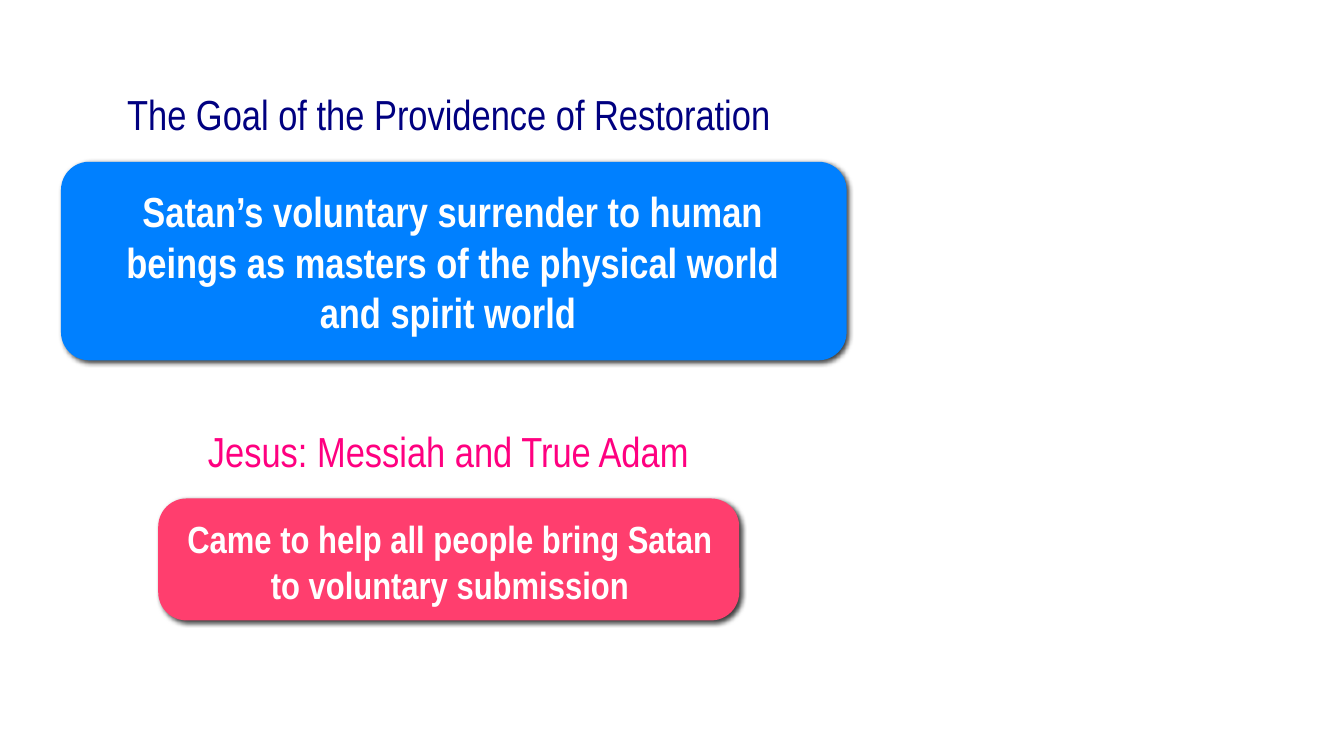
"""Build the slide on the goal of the providence of restoration."""
from dataclasses import dataclass

from lxml.etree import SubElement
from pptx import Presentation
from pptx.dml.color import RGBColor
from pptx.enum.shapes import MSO_SHAPE
from pptx.enum.text import MSO_ANCHOR, MSO_AUTO_SIZE, PP_ALIGN
from pptx.oxml.ns import qn
from pptx.util import Inches, Pt


@dataclass(frozen=True)
class Theme:
    """Hold the font, type sizes and colours."""
    font: str = "Arial Narrow"
    large: int = 60
    medium: int = 54
    white: str = "FFFFFF"
    black: str = "000000"
    navy: str = "000080"
    magenta: str = "FF0080"
    blue: str = "0080FF"
    rose: str = "FF3E6E"


class Deck:
    """Draw styled elements on the current slide."""

    def __init__(self, prs, theme):
        """Add a title-only slide."""
        self.theme = theme
        self.s = prs.slides.add_slide(prs.slide_layouts[5])

    def set_text(self, sp, text, size, color, bold=False, wrap=False):
        """Put centred, formatted text in a shape."""
        tf = sp.text_frame
        frame = {"margin_left": 0, "margin_top": 0, "margin_right": 0, "margin_bottom": 0,
                 "vertical_anchor": MSO_ANCHOR.MIDDLE, "word_wrap": wrap,
                 "auto_size": MSO_AUTO_SIZE.SHAPE_TO_FIT_TEXT}
        for name, value in frame.items():
            setattr(tf, name, value)
        p = tf.paragraphs[0]
        p.alignment = PP_ALIGN.CENTER
        r = p.add_run()
        r.text = text
        for name, value in {"name": self.theme.font, "size": Pt(size), "bold": bold}.items():
            setattr(r.font, name, value)
        r.font.color.rgb = RGBColor.from_string(color)

    def title(self, box, text, color):
        """Place and fill the title placeholder."""
        sp = self.s.shapes.title
        for name, value in zip(("left", "top", "width", "height"), box):
            setattr(sp, name, Inches(value))
        self.set_text(sp, text, self.theme.large, color)

    def text(self, box, text, size, color, bold=False, wrap=False):
        """Add a text box."""
        sp = self.s.shapes.add_textbox(*map(Inches, box))
        self.set_text(sp, text, size, color, bold, wrap)

    def panel(self, box, color, radius):
        """Add a rounded panel with a soft shadow."""
        sp = self.s.shapes.add_shape(MSO_SHAPE.ROUNDED_RECTANGLE, *map(Inches, box))
        sp.adjustments[0] = radius / min(box[2:])
        sp.fill.solid()
        sp.fill.fore_color.rgb = RGBColor.from_string(color)
        sp.line.fill.background()
        sp.shadow.inherit = False
        effects = sp._element.spPr.find(qn("a:effectLst"))
        shadow = SubElement(effects, qn("a:outerShdw"), blurRad=str(Pt(7)), dist=str(Pt(4)),
                            dir=str(45 * 60000), algn="tl", rotWithShape="0")
        clr = SubElement(shadow, qn("a:srgbClr"), val=self.theme.black)
        SubElement(clr, qn("a:alpha"), val="75000")


def main():
    """Build and save the presentation."""
    prs = Presentation()
    prs.slide_width, prs.slide_height = Inches(26.67), Inches(15)
    t = Theme()
    deck = Deck(prs, t)
    deck.title((1.84, 1.76, 14.13, 1.01), "The Goal of the Providence of Restoration", t.navy)
    deck.text((3.67, 8.44, 10.45, 1.01), "Jesus: Messiah and True Adam", t.large, t.magenta)
    statements = [
        ((1.21, 3.21, 15.59, 3.94), t.blue, (2.31, 3.67, 13.35, 3.03), t.large,
         "Satan’s voluntary surrender to human beings as masters of the physical world "
         "and spirit world "),
        ((3.14, 9.89, 11.53, 2.42), t.rose, (3.58, 10.23, 10.7, 1.82), t.medium,
         "Came to help all people bring Satan to voluntary submission"),
    ]
    for panel, fill, box, size, text in statements:
        deck.panel(panel, fill, 0.56)
        deck.text(box, text, size, t.white, bold=True, wrap=True)
    prs.save("out.pptx")


if __name__ == "__main__":
    main()
